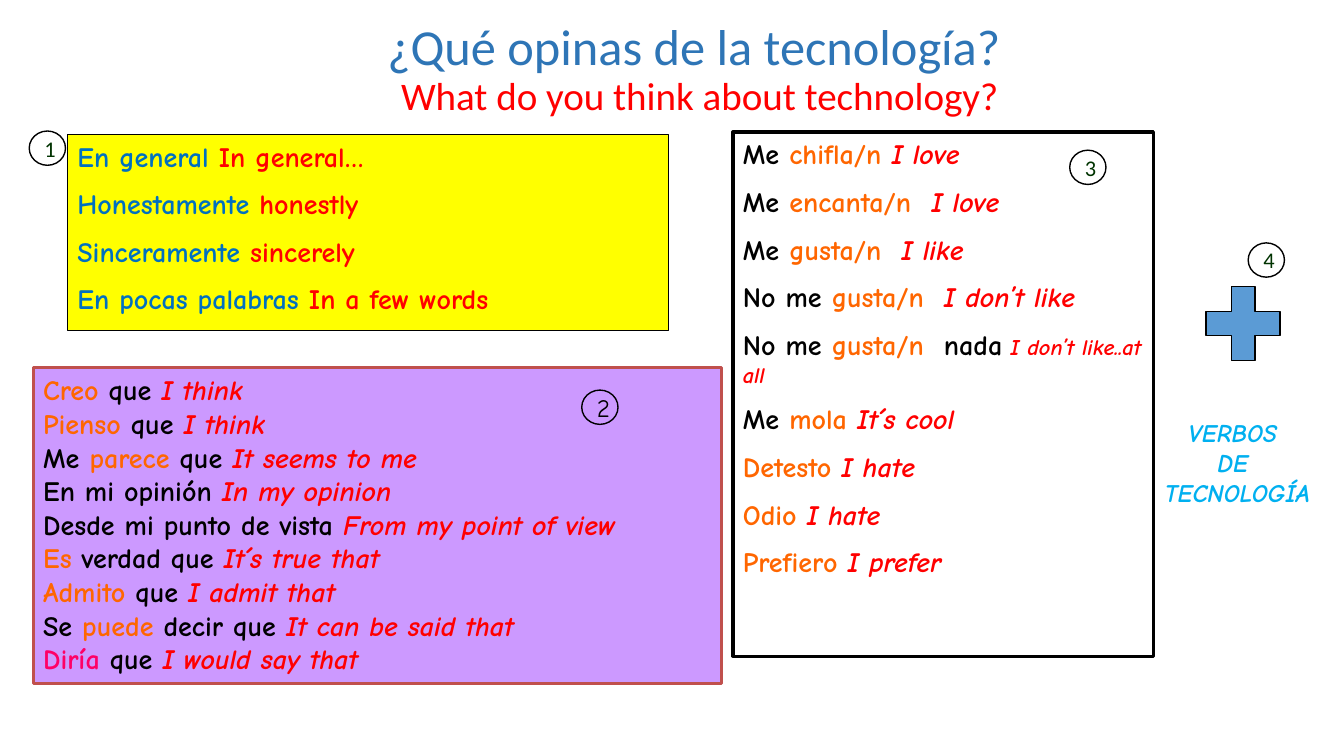
from pptx import Presentation
from pptx.util import Inches, Pt
from pptx.dml.color import RGBColor
from pptx.enum.shapes import MSO_SHAPE as Kind
from pptx.enum.text import PP_ALIGN as Align, MSO_ANCHOR as Anchor

INK, RED, ORANGE, BLUE = "000000", "FF0000", "FF6600", "0070C0"
COMIC, PLAIN = "Comic Neue", "Calibri"


def paint(target, color):
    if hasattr(target, "solid"):
        target.solid()
        target = target.fore_color
        target.rgb = RGBColor.from_string(color)
    else:
        target.color.rgb = RGBColor.from_string(color)


def write(para, text, color, size, font=COMIC, bold=False, italic=False):
    run = para.add_run()
    run.text = text
    run.font.name = font
    run.font.size = Pt(size)
    run.font.bold = bold
    run.font.italic = italic
    paint(run.font, color)


deck = Presentation()
deck.slide_width, deck.slide_height = Inches(13.33), Inches(7.5)
slide = deck.slides.add_slide(deck.slide_layouts[6])
shapes = slide.shapes

title = shapes.add_textbox(Inches(2.44), Inches(0.28), Inches(9), Inches(0.95))
frame = title.text_frame
frame.word_wrap = True
frame.vertical_anchor = Anchor.BOTTOM
heads = [
    ("¿Qué opinas de la tecnología? ", "2E75B6", 36),
    ("What do you think about technology?", RED, 27.9),
]
for i, (text, color, size) in enumerate(heads):
    para = frame.add_paragraph() if i else frame.paragraphs[0]
    para.alignment = Align.CENTER
    para.line_spacing = 0.9
    write(para, text, color, size, PLAIN)

openers = [
    [("En general ", BLUE), ("In general…", RED)],
    [("Honestamente ", BLUE), ("honestly", RED)],
    [("Sinceramente ", BLUE), ("sincerely", RED)],
    [("En pocas palabras ", BLUE), ("In a few words", RED)],
]
views = [
    [("Creo", ORANGE), (" que ", INK), ("I think", RED)],
    [("Pienso", ORANGE), (" que ", INK), ("I think", RED)],
    [("Me ", INK), ("parece", ORANGE), (" que ", INK), ("It seems to me", RED)],
    [("En mi opinión ", INK), ("In my opinion", RED)],
    [("Desde mi punto de vista ", INK), ("From my point of view", RED)],
    [("Es", ORANGE), (" verdad que ", INK), ("It´s true that", RED)],
    [("Admito", ORANGE), (" que ", INK), ("I admit that", RED)],
    [("Se ", INK), ("puede", ORANGE), (" decir que ", INK), ("It can be said that", RED)],
    [("Diría", "FF0066"), (" que ", INK), ("I would say that", RED)],
]
likes = [
    [("Me ", INK), ("chifla/n ", ORANGE), ("I love", RED)],
    [("Me ", INK), ("encanta/n  ", ORANGE), ("I love", RED)],
    [("Me ", INK), ("gusta/n  ", ORANGE), ("I like", RED)],
    [("No me ", INK), ("gusta/n  ", ORANGE), ("I don’t like", RED)],
    [("No me ", INK), ("gusta/n  ", ORANGE), ("nada", INK),
     (" ", INK, 16), ("I don’t like..at all", RED, 16)],
    [("Me ", INK), ("mola ", ORANGE), ("It´s cool", RED)],
    [("Detesto ", ORANGE), ("I hate", RED)],
    [("Odio ", ORANGE), ("I hate", RED)],
    [("Prefiero ", ORANGE), ("I prefer", RED)],
]
boxes = [
    (7.27, 1.31, 4.17, 5.2, None, INK, 2.25, 10, True, likes),
    (0.33, 3.65, 6.83, 3.13, "CC99FF", "C0504D", 2, 0, True, views),
    (0.67, 1.33, 5.96, 1.95, "FFFF00", INK, 0.75, 10, False, openers),
]
for x, y, w, h, fill, edge, width, gap, slant, rows in boxes:
    box = shapes.add_shape(Kind.RECTANGLE, Inches(x), Inches(y), Inches(w), Inches(h))
    box.shadow.inherit = False
    if fill:
        paint(box.fill, fill)
    else:
        box.fill.background()
    paint(box.line, edge)
    box.line.width = Pt(width)
    frame = box.text_frame
    frame.word_wrap = True
    frame.vertical_anchor = Anchor.TOP
    for i, row in enumerate(rows):
        para = frame.add_paragraph() if i else frame.paragraphs[0]
        para.alignment = Align.LEFT
        para.space_before = Pt(gap if i else 0)
        for text, color, *size in row:
            write(para, text, color, size[0] if size else 20,
                  bold=True, italic=slant and color == RED)

plus = shapes.add_shape(Kind.MATH_PLUS, Inches(11.83), Inches(2.71), Inches(1), Inches(1))
plus.shadow.inherit = False
paint(plus.fill, "5B9BD5")
paint(plus.line, INK)
plus.line.width = Pt(1)

verbs = shapes.add_textbox(Inches(11.21), Inches(4.09), Inches(2.12), Inches(1.01))
frame = verbs.text_frame
frame.word_wrap = True
for i, text in enumerate(["VERBOS ", "DE ", "TECNOLOGÍA"]):
    para = frame.add_paragraph() if i else frame.paragraphs[0]
    para.alignment = Align.CENTER
    write(para, text, "00B0F0", 18, bold=True, italic=True)

marks = [
    ("1", 0.29, 1.3, PLAIN, 16, "003300"),
    ("2", 5.77, 3.87, COMIC, 18, INK),
    ("3", 10.61, 1.49, PLAIN, 16, "003300"),
    ("4", 12.38, 2.41, PLAIN, 16, "003300"),
]
for text, x, y, font, size, color in marks:
    ring = shapes.add_shape(Kind.OVAL, Inches(x), Inches(y), Inches(0.36), Inches(0.34))
    ring.shadow.inherit = False
    ring.fill.background()
    paint(ring.line, INK)
    ring.line.width = Pt(1)
    frame = ring.text_frame
    frame.vertical_anchor = Anchor.MIDDLE
    para = frame.paragraphs[0]
    para.alignment = Align.CENTER
    write(para, text, color, size, font)

deck.save("out.pptx")
